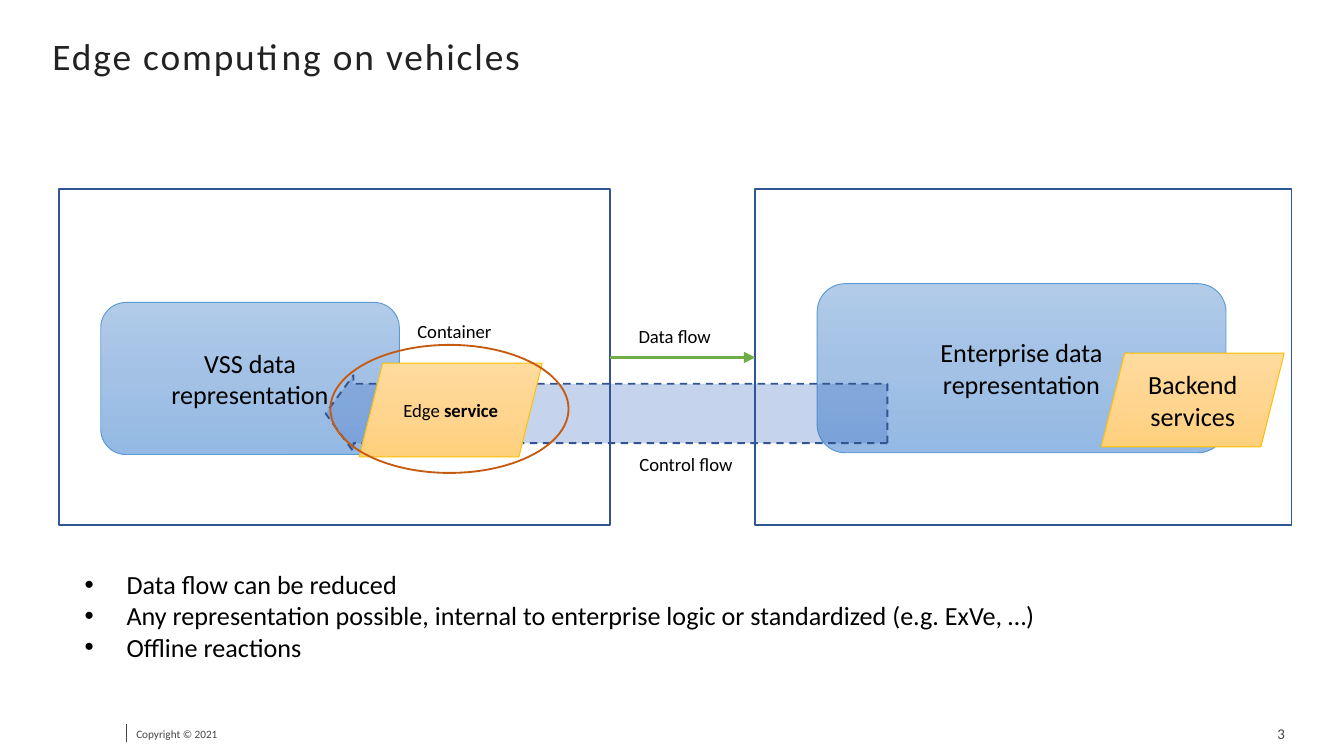
import copy

import pptx
import pptx.dml.color
import pptx.enum.dml
import pptx.enum.shapes
import pptx.enum.text
import pptx.oxml
import pptx.util
from lxml import etree

Pt = pptx.util.Pt
SHAPE = pptx.enum.shapes.MSO_SHAPE
ALIGN = pptx.enum.text.PP_ALIGN
ANCHOR = pptx.enum.text.MSO_ANCHOR
FONT = "Calibri"
BLACK, GREY = "000000", "464547"
BLUE = (("B1CBE9", "A3C1E5", "93B9E4"), "5B9BD5")
GOLD = (("FFDB9E", "FFD590", "FFD07C"), "FFC000")

# Each paragraph is a list of (text, bold) runs.
DATA_STORES = [
    ((54, 162, 160, 81.5), [[("VSS data\vrepresentation", False)]]),
    ((437.8, 152, 219, 90.6), [[("Enterprise data", False)], [("representation", False)]]),
]
SERVICES = [
    ((192.5, 194.5, 98, 50.2), [[("Edge ", False), ("service", True)]], 10),
    ((590, 189.2, 98, 50.2), [[("Backend services", False)]], 14),
]
CONTROL_ARROW = (174.4, 201, 301, 41)
VEHICLE = (31.7, 101.5, 295.2, 180)
BACKEND = (404.6, 101.5, 287.3, 180)
CONTAINER = (177, 184.8, 127.6, 68.6)
LABELS = [
    ("Container", (216.5, 168, 54.7, 19.4)),
    ("Data flow", (335, 170.6, 54, 19.4)),
    ("Control flow", (335.5, 239.3, 64.8, 19.4)),
]
BULLETS = [
    "Data flow can be reduced",
    "Any representation possible, internal to enterprise logic or standardized (e.g. ExVe, …)",
    "Offline reactions",
]


def colour(value):
    return pptx.dml.color.RGBColor.from_string(value)


def add_child(parent, tag, **attributes):
    child = etree.SubElement(parent, pptx.oxml.ns.qn(tag))
    for name, value in attributes.items():
        child.set(name, value)
    return child


def add_outline(page, kind, place, line, width=1):
    """Add an unfilled preset shape with a plain border."""
    shape = page.shapes.add_shape(kind, *map(Pt, place))
    shape.shadow.inherit = False
    shape.fill.background()
    shape.line.color.rgb = colour(line)
    shape.line.width = Pt(width)
    return shape


def fill_gradient(shape, stops):
    """Fill from top to bottom with three evenly spaced colours."""
    shape.fill.gradient()
    shape.fill.gradient_angle = 270
    first = shape.fill._fill._gradFill.gsLst[0]
    first.addnext(copy.deepcopy(first))
    for stop, value, position in zip(shape.fill.gradient_stops, stops, (0, 0.5, 1)):
        stop.color.rgb = colour(value)
        stop.position = position


def write(box, paragraphs, size, ink=BLACK, align=ALIGN.LEFT, bullet=False):
    frame = box.text_frame
    for number, runs in enumerate(paragraphs):
        para = frame.paragraphs[0] if number == 0 else frame.add_paragraph()
        para.alignment = align
        if bullet:
            properties = para._p.get_or_add_pPr()
            properties.set("marL", str(Pt(22.5)))
            properties.set("indent", str(-Pt(22.5)))
            add_child(properties, "a:buFont", typeface="Arial")
            add_child(properties, "a:buChar", char="•")
        para.font.name = FONT
        para.font.size = Pt(size)
        para.font.color.rgb = colour(ink)
        for text, bold in runs:
            before = len(para.runs)
            for part_number, part in enumerate(text.split("\v")):
                if part_number:
                    para.add_line_break()
                para.add_run().text = part
            for span in para.runs[before:]:
                span.font.name = FONT
                span.font.size = Pt(size)
                span.font.color.rgb = colour(ink)
                if bold:
                    span.font.bold = True


def add_block(page, kind, place, theme, paragraphs, size):
    stops, line = theme
    shape = add_outline(page, kind, place, line, 0.5)
    fill_gradient(shape, stops)
    shape.text_frame.vertical_anchor = ANCHOR.MIDDLE
    write(shape, paragraphs, size, align=ALIGN.CENTER)


def add_text(page, place, lines, size, ink=BLACK, align=ALIGN.LEFT, bullet=False,
             wrap=False, margins=(7.2, 3.6), anchor=ANCHOR.TOP, spacing=0):
    box = page.shapes.add_textbox(*map(Pt, place))
    frame = box.text_frame
    frame.word_wrap = wrap
    frame.vertical_anchor = anchor
    frame.margin_left = frame.margin_right = Pt(margins[0])
    frame.margin_top = frame.margin_bottom = Pt(margins[1])
    write(box, [[(line, False)] for line in lines], size, ink, align, bullet)
    if spacing:
        for span in frame.paragraphs[0].runs:
            span.font._element.set("spc", str(int(spacing * 100)))


def add_line(page, start, end, ink, width):
    line = page.shapes.add_connector(
        pptx.enum.shapes.MSO_CONNECTOR.STRAIGHT, *map(Pt, start + end))
    line.line.color.rgb = colour(ink)
    line.line.width = Pt(width)
    add_child(line._element.spPr, "a:effectLst")
    return line


def add_control_arrow(page):
    arrow = add_outline(page, SHAPE.RIGHT_ARROW, CONTROL_ARROW, "325491")
    arrow.rotation = 180
    arrow.adjustments[0], arrow.adjustments[1] = 0.775, 0.365
    arrow.line.dash_style = pptx.enum.dml.MSO_LINE.DASH
    arrow.fill.solid()
    arrow.fill.fore_color.rgb = colour("4472C4")
    tint = arrow._element.spPr.find(pptx.oxml.ns.qn("a:solidFill"))[0]
    add_child(tint, "a:alpha", val="31000")


def main():
    deck = pptx.Presentation()
    deck.slide_width, deck.slide_height = Pt(720), Pt(405)
    page = deck.slides.add_slide(deck.slide_layouts[6])

    footer = {"ink": GREY, "wrap": True, "margins": (5, 3), "anchor": ANCHOR.MIDDLE}
    add_text(page, (68, 386, 104, 14.4), ["Copyright © 2021"], 6, **footer)
    add_line(page, (67.7, 388), (67.7, 397.5), GREY, 0.25)
    add_text(page, (577.4, 386, 116, 14.4), ["3"], 8, align=ALIGN.RIGHT, spacing=0.1, **footer)
    add_text(page, (28.1, 18, 664, 24.5), ["Edge computing on vehicles"], 20, "222222",
             wrap=True, margins=(0, 0), spacing=1)

    for place, paragraphs in DATA_STORES:
        add_block(page, SHAPE.ROUNDED_RECTANGLE, place, BLUE, paragraphs, 14)
    add_control_arrow(page)
    for place, paragraphs, size in SERVICES:
        add_block(page, SHAPE.PARALLELOGRAM, place, GOLD, paragraphs, size)

    vehicle, backend = [add_outline(page, SHAPE.RECTANGLE, place, "2F5597")
                        for place in (VEHICLE, BACKEND)]
    add_outline(page, SHAPE.OVAL, CONTAINER, "C55A11")

    data_flow = add_line(page, (326.9, 191.5), (404.6, 191.5), "70AD47", 2)
    data_flow.begin_connect(vehicle, 3)
    data_flow.end_connect(backend, 1)
    add_child(data_flow.line._get_or_add_ln(), "a:tailEnd", type="triangle")

    for text, place in LABELS:
        add_text(page, place, [text], 10)
    add_text(page, (38.2, 301, 532, 58.3), BULLETS, 14, bullet=True)

    deck.save("out.pptx")


if __name__ == "__main__":
    main()
